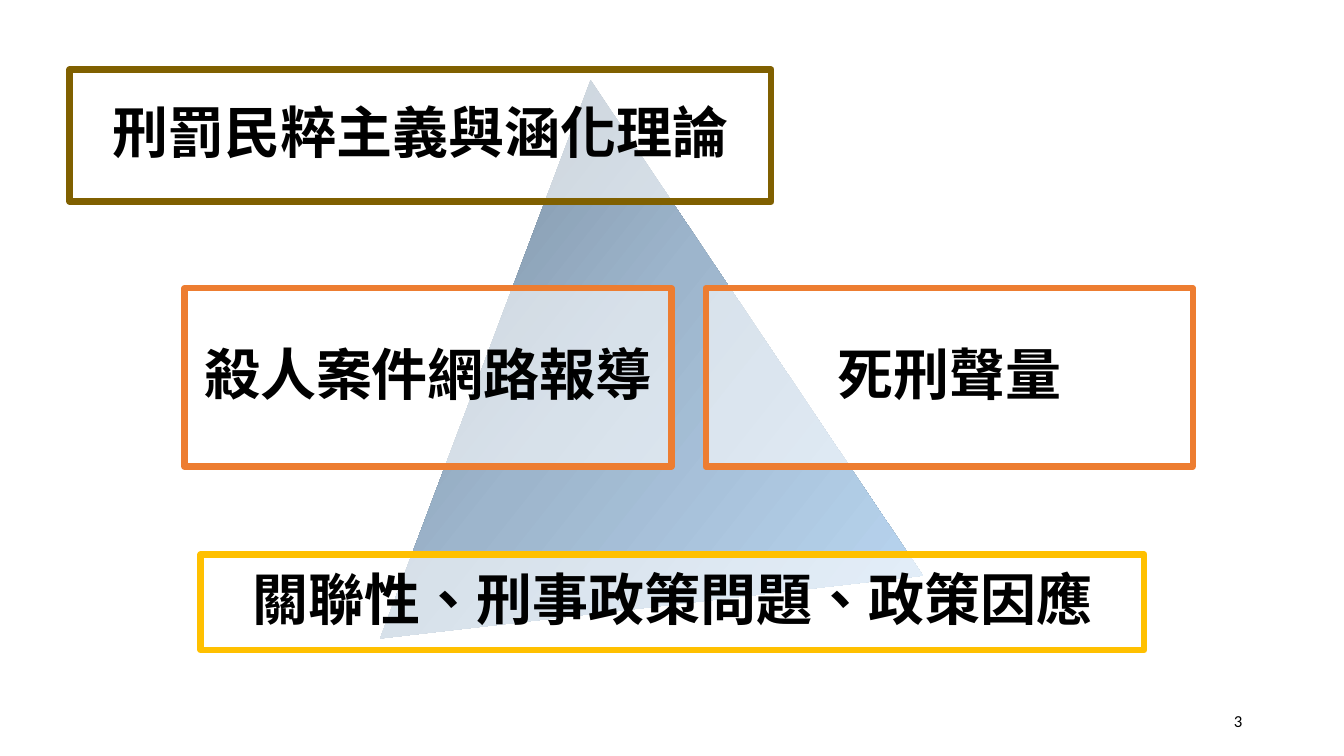
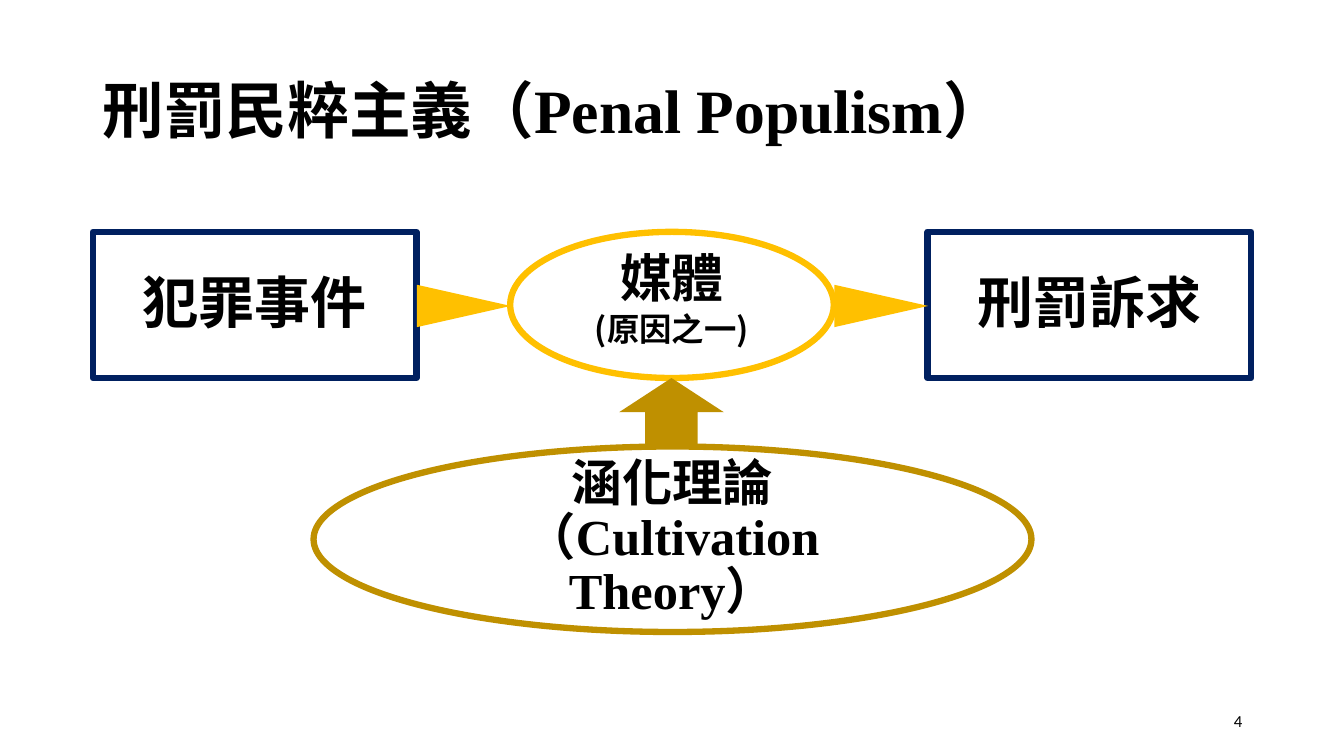
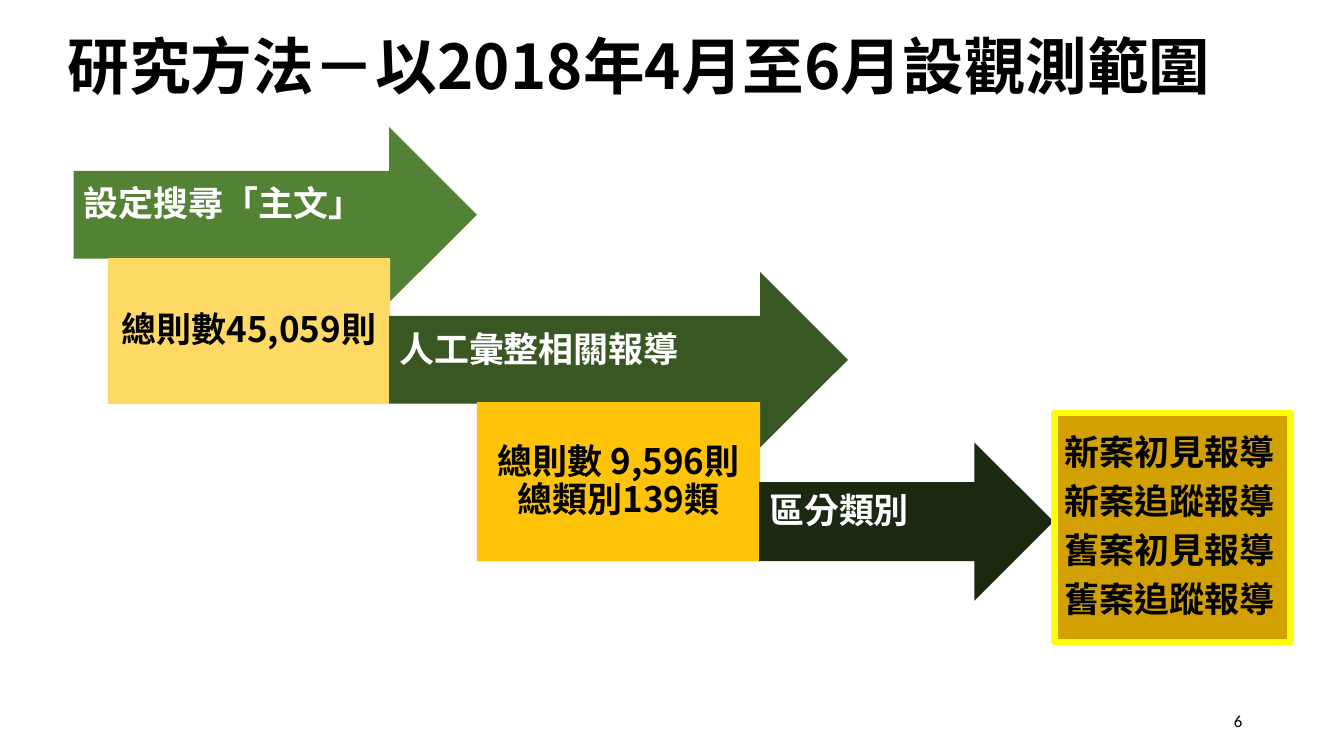
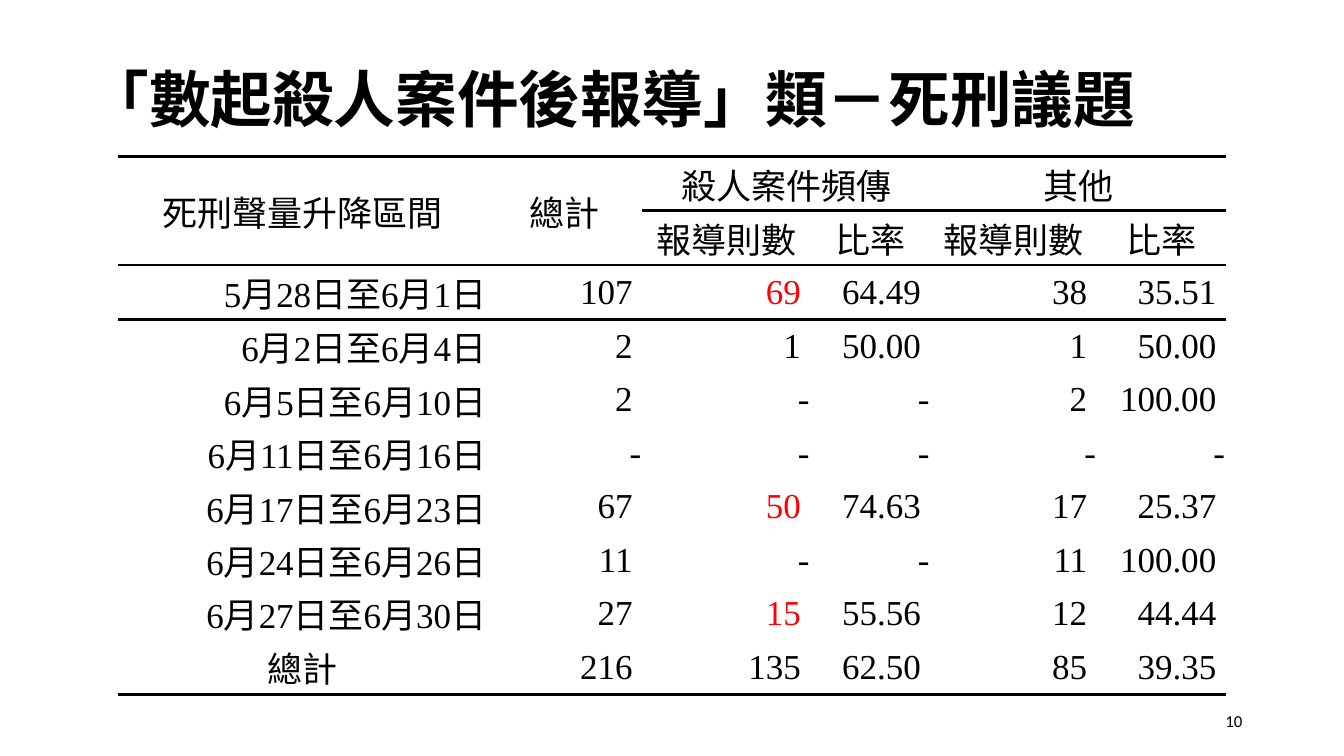
from copy import deepcopy
from dataclasses import dataclass
from typing import Optional

from lxml.etree import SubElement
from pptx import Presentation
from pptx.dml.color import RGBColor
from pptx.enum.shapes import MSO_SHAPE
from pptx.enum.text import MSO_ANCHOR, PP_ALIGN
from pptx.oxml.ns import qn
from pptx.util import Inches, Pt

COLORS = {
    "black": "000000", "white": "FFFFFF", "red": "FF0000", "yellow": "FFFF00",
    "olive": "806000", "orange": "ED7D31", "gold": "FFC000", "navy": "002060",
    "ochre": "BF9000", "green": "548235", "forest": "385723", "pine": "1B2911",
    "sand": "FFD966", "amber": "FFC409", "mustard": "D2A000",
    "slate": "6E7F8F", "steel": "9DB5CC", "sky": "BAD7F2",
}
SANS = "Noto Sans CJK SC"
SERIF = "Times New Roman"
NUMBER_FONT = "Calibri"
BORDER = Pt(4.5)


@dataclass(frozen=True)
class Frame:
    left: float
    top: float
    width: float
    height: float

    def lengths(self) -> tuple:
        return tuple(Inches(value) for value in (self.left, self.top, self.width, self.height))


@dataclass(frozen=True)
class Words:
    text: str
    size: float
    font: str = SANS
    color: str = "black"
    bold: bool = True


@dataclass(frozen=True)
class Layout:
    align: PP_ALIGN = PP_ALIGN.CENTER
    anchor: MSO_ANCHOR = MSO_ANCHOR.MIDDLE
    spacing: Optional[float] = 0.9
    before: float = 0
    after: float = 0
    insets: tuple = (0.1, 0.05, 0.1, 0.05)


@dataclass(frozen=True)
class Block:
    frame: Frame
    paragraphs: tuple = ()
    kind: MSO_SHAPE = MSO_SHAPE.RECTANGLE
    fill: Optional[str] = None
    alpha: Optional[int] = None
    line: Optional[str] = None
    rotation: float = 0
    layout: Layout = Layout()


TITLE = Layout(PP_ALIGN.LEFT)
TOP_TITLE = Layout(PP_ALIGN.LEFT, MSO_ANCHOR.TOP)
PAGE_NUMBER = Layout(PP_ALIGN.RIGHT, spacing=None)
STEP = Layout(PP_ALIGN.LEFT, insets=(0.1, 0.1, 0.28, 0.28))
RESULT = Layout(insets=(0.1,) * 4)
CATEGORIES = Layout(PP_ALIGN.LEFT, after=8, insets=(0.1,) * 4)


def rgb(name: str) -> RGBColor:
    return RGBColor.from_string(COLORS[name])


def add_run(paragraph, words: Words) -> None:
    run = paragraph.add_run()
    run.text = words.text
    font = run.font
    font.name, font.size, font.bold = words.font, Pt(words.size), words.bold
    font.color.rgb = rgb(words.color)
    properties = run._r.get_or_add_rPr()
    properties.set("lang", "zh-TW")
    SubElement(properties, qn("a:ea")).set("typeface", SANS)


def write_text(text_frame, paragraphs: tuple, layout: Layout) -> None:
    text_frame.word_wrap = True
    text_frame.vertical_anchor = layout.anchor
    left, top, right, bottom = (Inches(value) for value in layout.insets)
    text_frame.margin_left, text_frame.margin_top = left, top
    text_frame.margin_right, text_frame.margin_bottom = right, bottom
    for index, runs in enumerate(paragraphs):
        paragraph = text_frame.add_paragraph() if index else text_frame.paragraphs[0]
        paragraph.alignment = layout.align
        paragraph.line_spacing = layout.spacing
        paragraph.space_before = Pt(layout.before if index else 0)
        paragraph.space_after = Pt(layout.after)
        for words in runs:
            add_run(paragraph, words)


def add_block(slide, block: Block):
    shape = slide.shapes.add_shape(block.kind, *block.frame.lengths())
    shape.shadow.inherit = False
    shape.rotation = block.rotation
    if block.fill:
        shape.fill.solid()
        shape.fill.fore_color.rgb = rgb(block.fill)
        if block.alpha:
            color = shape._element.spPr.find(qn("a:solidFill"))[0]
            SubElement(color, qn("a:alpha")).set("val", str(block.alpha * 1000))
    else:
        shape.fill.background()
    if block.line:
        shape.line.color.rgb = rgb(block.line)
        shape.line.width = BORDER
    else:
        shape.line.fill.background()
    if block.paragraphs:
        write_text(shape.text_frame, block.paragraphs, block.layout)
    return shape


def add_text(slide, frame: Frame, runs: tuple, layout: Layout) -> None:
    write_text(slide.shapes.add_textbox(*frame.lengths()).text_frame, (runs,), layout)


def add_slide(presentation, number: int):
    slide = presentation.slides.add_slide(presentation.slide_layouts[6])
    words = Words(str(number), 12, NUMBER_FONT, bold=False)
    add_text(slide, Frame(9.42, 6.95, 3, 0.4), (words,), PAGE_NUMBER)
    return slide


def lines(size: float, *texts: str, color: str = "black") -> tuple:
    return tuple((Words(text, size, color=color),) for text in texts)


def build_framework(presentation) -> None:
    slide = add_slide(presentation, 3)
    pyramid = add_block(slide, Block(Frame(3.45, 0.78, 5.42, 5.26),
                                     kind=MSO_SHAPE.ISOSCELES_TRIANGLE, rotation=353.4))
    pyramid.fill.gradient()
    pyramid.fill.gradient_angle = 315
    stop_list = pyramid._element.spPr.find(qn("a:gradFill")).find(qn("a:gsLst"))
    stop_list.insert(1, deepcopy(stop_list[0]))
    for index, (stop, color) in enumerate(zip(pyramid.fill.gradient_stops,
                                              ("slate", "steel", "sky"))):
        stop.position = index / 2
        stop.color.rgb = rgb(color)
    for frame, text, line in (
        (Frame(0.69, 0.69, 6.96, 1.31), "刑罰民粹主義與涵化理論", "olive"),
        (Frame(1.83, 2.86, 4.83, 1.77), "殺人案件網路報導", "orange"),
        (Frame(7, 2.86, 4.83, 1.77), "死刑聲量", "orange"),
        (Frame(1.99, 5.5, 9.36, 0.95), "關聯性、刑事政策問題、政策因應", "gold"),
    ):
        add_block(slide, Block(frame, lines(40, text), fill="white", alpha=60, line=line))


def build_populism(presentation) -> None:
    slide = add_slide(presentation, 4)
    add_text(slide, Frame(0.92, 0.4, 11.5, 1.45),
             (Words("刑罰民粹主義", 44), Words("（Penal Populism）", 44, SERIF)), TITLE)
    pitch = 4.14
    event, media, demand = (Frame(0.92 + pitch * i, 2.3, 3.21, 1.45) for i in range(3))
    add_block(slide, Block(event, lines(40, "犯罪事件"), line="navy"))
    add_block(slide, Block(demand, lines(40, "刑罰訴求"), line="navy"))
    add_block(slide, Block(media, lines(37, "媒體") + lines(23.1, "(原因之一)"),
                           MSO_SHAPE.OVAL, line="gold",
                           layout=Layout(spacing=0.7, before=10)))
    theory = (Words("涵化理論（Cultivation Theory）", 36, SERIF),)
    add_block(slide, Block(Frame(3.11, 4.43, 7.12, 1.84), (theory,),
                           MSO_SHAPE.OVAL, line="ochre"))
    add_block(slide, Block(Frame(6.14, 3.75, 1.04, 0.68),
                           kind=MSO_SHAPE.UP_ARROW, fill="ochre"))
    for index in range(2):
        add_block(slide, Block(Frame(4.39 + pitch * index, 2.57, 0.42, 0.93),
                               kind=MSO_SHAPE.ISOSCELES_TRIANGLE, fill="gold", rotation=90))


def build_method(presentation) -> None:
    slide = add_slide(presentation, 6)
    add_text(slide, Frame(0.57, 0.31, 11.85, 1.45),
             (Words("研究方法－以2018年4月至6月設觀測範圍", 44),), TOP_TITLE)
    arrow = MSO_SHAPE.RIGHT_ARROW
    for block in (
        Block(Frame(0.73, 1.26, 4, 1.74), lines(25, "設定搜尋「主文」", color="white"),
              arrow, "green", layout=STEP),
        Block(Frame(1.07, 2.56, 2.8, 1.45), lines(25, "總則數45,059則"),
              fill="sand", layout=RESULT),
        Block(Frame(3.86, 2.7, 4.55, 1.74), lines(25, "人工彙整相關報導", color="white"),
              arrow, "forest", layout=STEP),
        Block(Frame(4.73, 3.99, 2.81, 1.58), lines(25, "總則數 9,596則 總類別139類"),
              fill="amber", layout=RESULT),
        Block(Frame(7.53, 4.39, 2.92, 1.57), lines(25, "區分類別", color="white"),
              arrow, "pine", layout=STEP),
        Block(Frame(10.46, 4.1, 2.34, 2.27),
              lines(25, "新案初見報導", "新案追蹤報導", "舊案初見報導", "舊案追蹤報導"),
              fill="mustard", line="yellow", layout=CATEGORIES),
    ):
        add_block(slide, block)


COLUMN_WIDTHS = (3.66, 1.54, 1.67, 1.19, 1.65, 1.28)
ROWS = (
    ("死刑聲量升降區間", "總計", "殺人案件頻傳", "", "其他", ""),
    ("", "", "報導則數", "比率", "報導則數", "比率"),
    ("5月28日至6月1日", "107", "69", "64.49", "38", "35.51"),
    ("6月2日至6月4日", "2", "1", "50.00", "1", "50.00"),
    ("6月5日至6月10日", "2", "-", "-", "2", "100.00"),
    ("6月11日至6月16日", "-", "-", "-", "-", "-"),
    ("6月17日至6月23日", "67", "50", "74.63", "17", "25.37"),
    ("6月24日至6月26日", "11", "-", "-", "11", "100.00"),
    ("6月27日至6月30日", "27", "15", "55.56", "12", "44.44"),
    ("總計", "216", "135", "62.50", "85", "39.35"),
)
MERGES = ((0, 0, 1, 0), (0, 1, 1, 1), (0, 2, 0, 3), (0, 4, 0, 5))
HIGHLIGHTS = {(2, 2), (6, 2), (8, 2)}
PLAIN_STYLE = "{2D5ABB26-0587-4C30-8999-92F81FD0307C}"


def add_border(cell, edge: str) -> None:
    line = SubElement(cell._tc.get_or_add_tcPr(), qn(edge), w=str(Pt(2.25)))
    fill = SubElement(line, qn("a:solidFill"))
    SubElement(fill, qn("a:srgbClr")).set("val", COLORS["black"])


def fill_cell(cell, row: int, column: int, text: str) -> None:
    last = len(ROWS) - 1
    if row in (0, 2) or (row == 1 and column >= 2):
        add_border(cell, "a:lnT")
    if row in (0, 1, last):
        add_border(cell, "a:lnB")
    cell.fill.background()
    cell.vertical_anchor = MSO_ANCHOR.MIDDLE
    cell.margin_left = cell.margin_top = cell.margin_right = Inches(0.01)
    cell.margin_bottom = Inches(0)
    if not text:
        return
    paragraph = cell.text_frame.paragraphs[0]
    centred = row < 2 or (row == last and column == 0)
    paragraph.alignment = PP_ALIGN.CENTER if centred else PP_ALIGN.RIGHT
    is_number = row >= 2 and column and text != "-"
    color = "red" if (row, column) in HIGHLIGHTS else "black"
    add_run(paragraph, Words(text + " " if is_number else text, 25, SERIF, color, False))


def build_results(presentation) -> None:
    slide = add_slide(presentation, 10)
    add_text(slide, Frame(0.77, 0.29, 11.77, 1.45),
             (Words("「數起殺人案件後報導」類－死刑議題", 44),), TITLE)
    frame = Frame(1.17, 1.55, sum(COLUMN_WIDTHS), 5.31)
    table = slide.shapes.add_table(len(ROWS), len(COLUMN_WIDTHS), *frame.lengths()).table
    table.first_row = table.horz_banding = False
    table._tbl.tblPr.find(qn("a:tableStyleId")).text = PLAIN_STYLE
    for column, width in zip(table.columns, COLUMN_WIDTHS):
        column.width = Inches(width)
    for index, row in enumerate(table.rows):
        row.height = Inches(0.54 if index in (0, 1, 2, len(ROWS) - 1) else 0.53)
    for top, left, bottom, right in MERGES:
        table.cell(top, left).merge(table.cell(bottom, right))
    for row, texts in enumerate(ROWS):
        for column, text in enumerate(texts):
            fill_cell(table.cell(row, column), row, column, text)


def main() -> None:
    presentation = Presentation()
    presentation.slide_width = Inches(13.33)
    presentation.slide_height = Inches(7.5)
    for build in (build_framework, build_populism, build_method, build_results):
        build(presentation)
    presentation.save("out.pptx")


if __name__ == "__main__":
    main()
